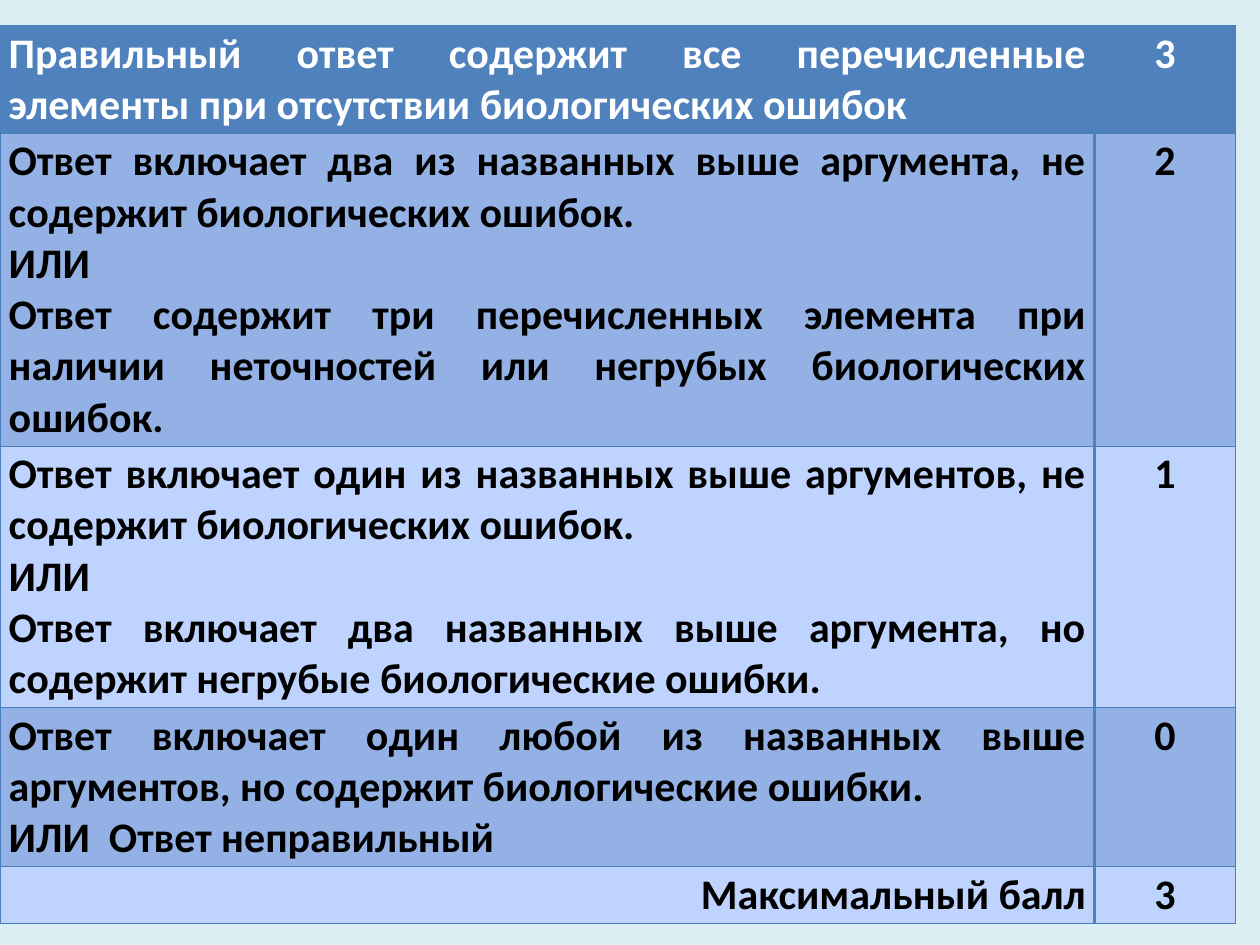
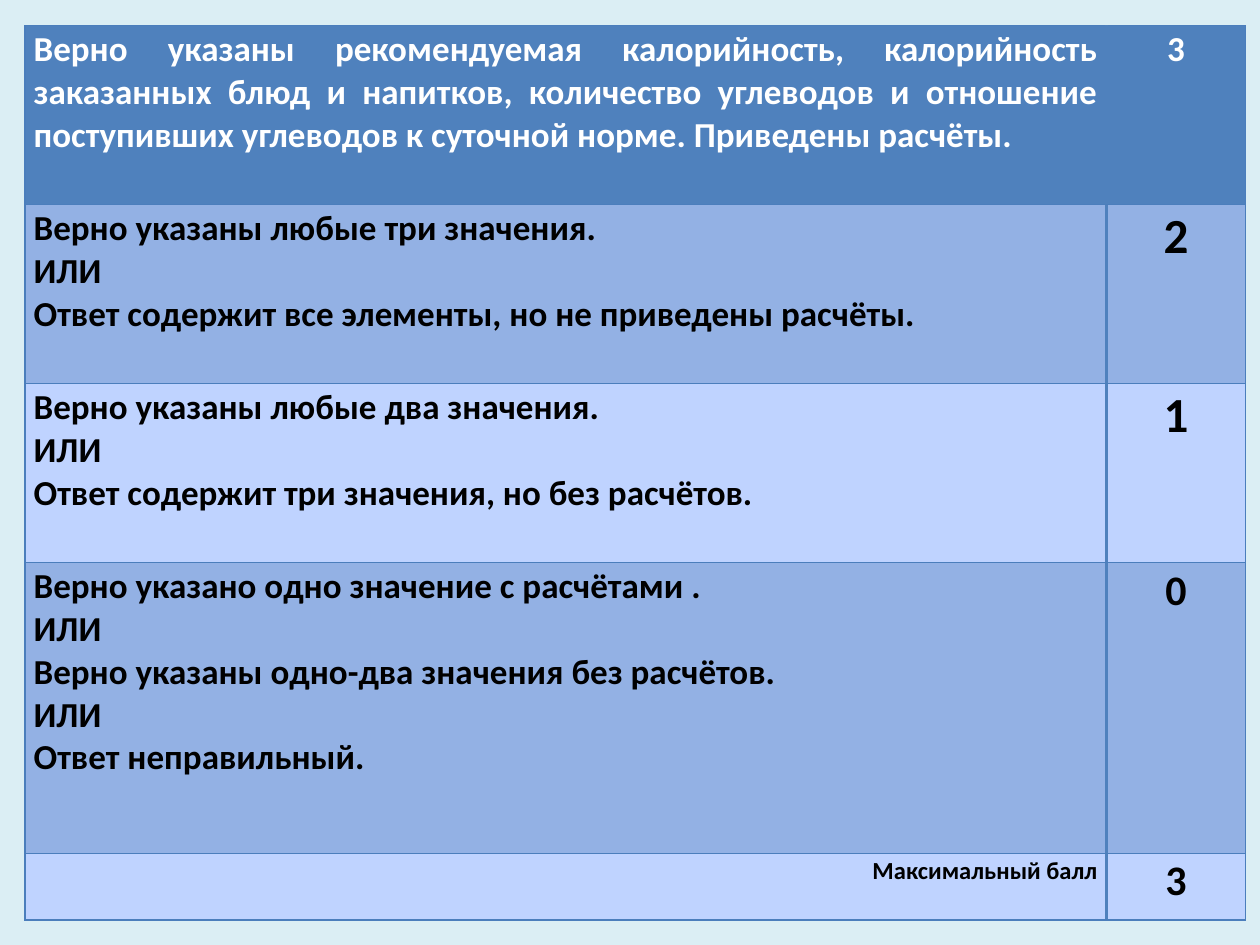
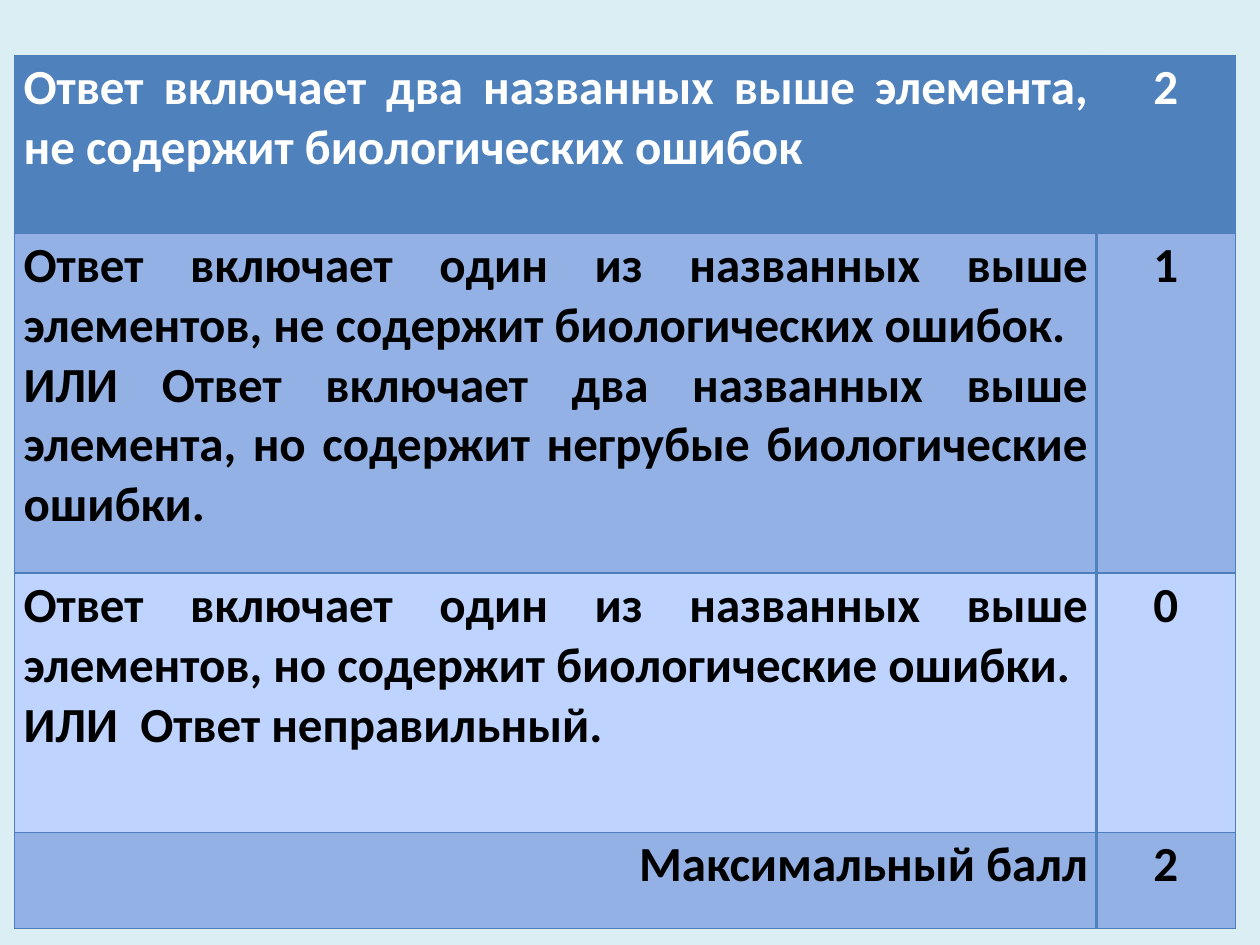
import dataclasses

import pptx
import pptx.dml.color
import pptx.enum.text
import pptx.oxml
import pptx.oxml.ns
import pptx.util

Pt = pptx.util.Pt
RGBColor = pptx.dml.color.RGBColor
ALIGN = pptx.enum.text.PP_ALIGN

BACKGROUND = RGBColor(0xDB, 0xEE, 0xF4)
HEADER_FILL = RGBColor(0x4F, 0x81, 0xBD)
BAND_FILLS = (RGBColor(0xBF, 0xD3, 0xFF), RGBColor(0x93, 0xB1, 0xE4))
EDGE = RGBColor(0x4B, 0x7E, 0xBC)
WHITE = RGBColor(0xFF, 0xFF, 0xFF)
BLACK = RGBColor(0x00, 0x00, 0x00)

FONT = "Calibri"
MAXIMUM_LABEL = "Максимальный балл"
EDGE_WIDTH, DIVIDER_WIDTH = Pt(0.75), Pt(2)
CELL_MARGINS = {
    "margin_left": Pt(5), "margin_right": Pt(5),
    "margin_top": Pt(1.5), "margin_bottom": Pt(1.5),
}


@dataclasses.dataclass
class Criterion:
    """One table row: its height, wording, score and text sizes in points."""
    height: float
    wording: str
    score: str
    wording_size: int
    score_size: int


SLIDES = [
    {
        "box": (0, 14.75), "widths": (625.5, 80.5),
        "criteria": [
            Criterion(61.5, "Правильный ответ содержит все перечисленные элементы "
                      "при отсутствии биологических ошибок", "3", 24, 24),
            Criterion(178.5, "Ответ включает два из названных выше аргумента, "
                      "не содержит биологических ошибок.\nИЛИ\n"
                      "Ответ содержит три перечисленных элемента при наличии "
                      "неточностей или негрубых биологических ошибок.", "2", 24, 24),
            Criterion(149, "Ответ включает один из названных выше аргументов, "
                      "не содержит биологических ошибок.\nИЛИ\n"
                      "Ответ включает два названных выше аргумента, но содержит "
                      "негрубые биологические ошибки.", "1", 24, 24),
            Criterion(91, "Ответ включает один любой из названных выше аргументов, "
                      "но содержит биологические ошибки.\n"
                      "ИЛИ  Ответ неправильный", "0", 24, 24),
            Criterion(32.5, MAXIMUM_LABEL, "3", 24, 24),
        ],
    },
    {
        "box": (14.25, 14.75), "widths": (618, 79.5),
        "criteria": [
            Criterion(102.25, "Верно указаны рекомендуемая калорийность, калорийность "
                      "заказанных блюд и напитков, количество углеводов и отношение "
                      "поступивших углеводов к суточной норме. Приведены расчёты.",
                      "3", 20, 20),
            Criterion(102.25, "Верно указаны любые три значения.\nИЛИ\n"
                      "Ответ содержит все элементы, но не приведены расчёты.",
                      "2", 20, 28),
            Criterion(102.25, "Верно указаны любые два значения.\nИЛИ\n"
                      "Ответ содержит три значения, но без расчётов.", "1", 20, 28),
            Criterion(166.25, "Верно указано одно значение с расчётами .\nИЛИ\n"
                      "Верно указаны одно-два значения без расчётов.\nИЛИ\n"
                      "Ответ неправильный.", "0", 20, 24),
            Criterion(38, MAXIMUM_LABEL, "3", 14, 24),
        ],
    },
    {
        "box": (8.5, 31.5), "widths": (618, 79.5),
        "criteria": [
            Criterion(101.75, "Ответ включает два названных выше элемента, "
                      "не содержит биологических ошибок", "2", 28, 28),
            Criterion(194.25, "Ответ включает один из названных выше элементов, "
                      "не содержит биологических ошибок.\n"
                      "ИЛИ Ответ включает два названных выше элемента, но содержит "
                      "негрубые биологические ошибки.", "1", 28, 28),
            Criterion(148.25, "Ответ включает один из названных выше элементов, "
                      "но содержит биологические ошибки.\n"
                      "ИЛИ  Ответ неправильный.", "0", 28, 28),
            Criterion(54.75, MAXIMUM_LABEL, "2", 28, 28),
        ],
    },
]


def set_attributes(target, values):
    for name, value in values.items():
        setattr(target, name, value)


def add_borders(cell, divider_side):
    """Outline a cell, with the thick column divider on the given side."""
    properties = cell._tc.get_or_add_tcPr()
    for side in "LRTB":
        is_divider = side == divider_side
        width = DIVIDER_WIDTH if is_divider else EDGE_WIDTH
        color = HEADER_FILL if is_divider else EDGE
        properties.append(pptx.oxml.parse_xml(
            f'<a:ln{side} {pptx.oxml.ns.nsdecls("a")} w="{int(width)}">'
            f'<a:solidFill><a:srgbClr val="{color}"/></a:solidFill></a:ln{side}>'))


def fill_cell(cell, text, size, alignment, row_index, divider_side):
    is_header = row_index == 0
    set_attributes(cell, CELL_MARGINS)
    add_borders(cell, divider_side)
    cell.fill.solid()
    cell.fill.fore_color.rgb = HEADER_FILL if is_header else BAND_FILLS[row_index % 2]
    cell.text_frame.text = text
    for para in cell.text_frame.paragraphs:
        para.alignment = alignment
        for span in para.runs:
            set_attributes(span.font, {"name": FONT, "size": Pt(size), "bold": True})
            span.font.color.rgb = WHITE if is_header else BLACK


def add_criteria_table(page, box, widths, criteria):
    left, top = box
    height = sum(criterion.height for criterion in criteria)
    table = page.shapes.add_table(
        len(criteria), len(widths), Pt(left), Pt(top), Pt(sum(widths)), Pt(height)).table
    table.horz_banding = False
    for column, width in zip(table.columns, widths):
        column.width = Pt(width)
    for index, criterion in enumerate(criteria):
        table.rows[index].height = Pt(criterion.height)
        is_total = criterion.wording == MAXIMUM_LABEL
        fill_cell(table.cell(index, 0), criterion.wording, criterion.wording_size,
                  ALIGN.RIGHT if is_total else ALIGN.JUSTIFY, index, "R")
        fill_cell(table.cell(index, 1), criterion.score, criterion.score_size,
                  ALIGN.CENTER, index, "L")


def main():
    deck = pptx.Presentation()
    set_attributes(deck, {"slide_width": Pt(720), "slide_height": Pt(540)})
    background = deck.slide_master.background.fill
    background.solid()
    background.fore_color.rgb = BACKGROUND
    blank_layout = deck.slide_layouts.get_by_name("Blank")
    for content in SLIDES:
        add_criteria_table(deck.slides.add_slide(blank_layout), **content)
    deck.save("out.pptx")


if __name__ == "__main__":
    main()
